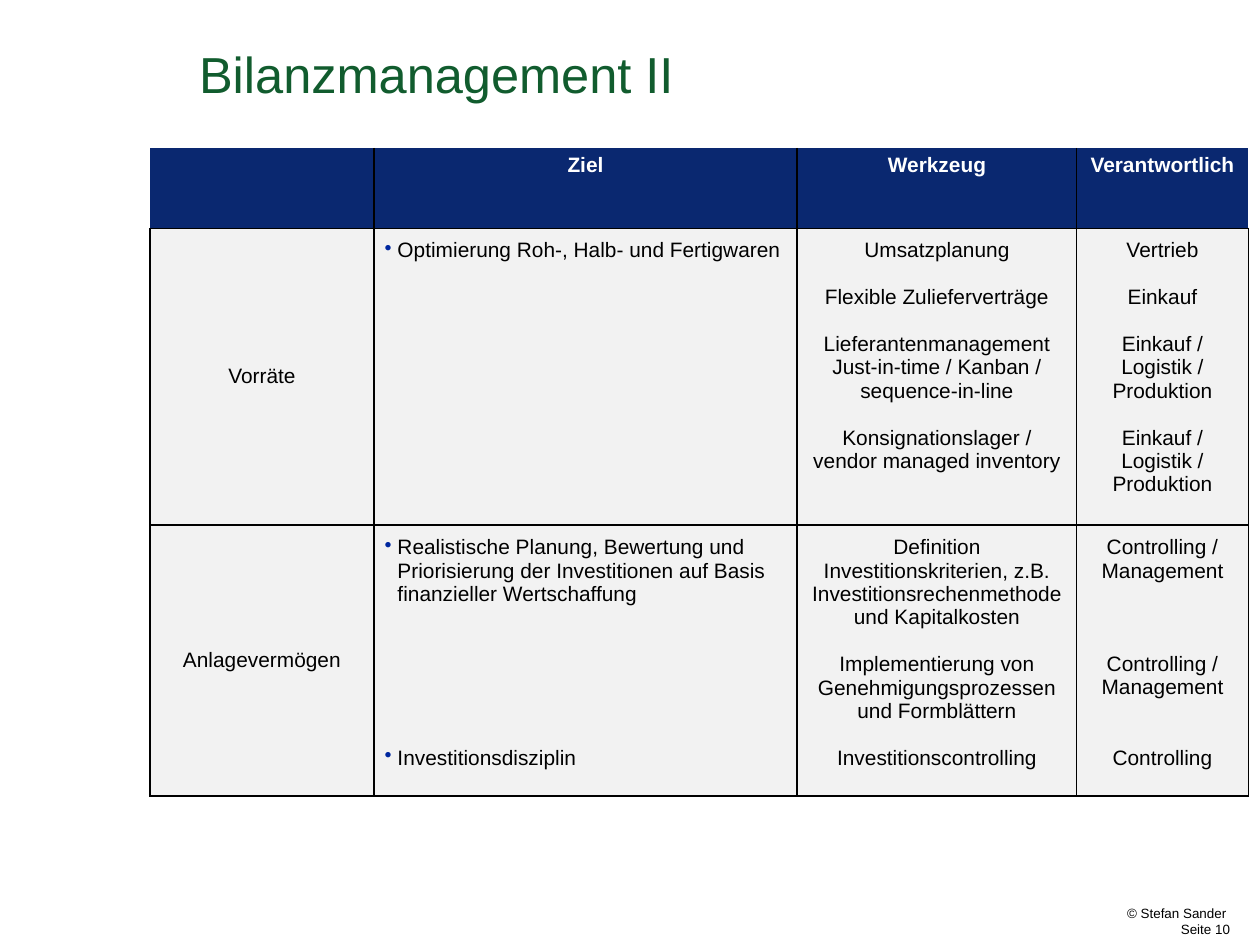
from dataclasses import dataclass

from lxml.etree import SubElement
from pptx import Presentation
from pptx.dml.color import RGBColor
from pptx.enum.text import MSO_ANCHOR, PP_ALIGN
from pptx.oxml.ns import qn
from pptx.util import Inches, Pt

COLORS = {
    "title": "115C2E",
    "header": "0A2870",
    "body": "F2F2F2",
    "white": "FFFFFF",
    "black": "000000",
    "bullet": "00279F",
}
FONT = "Arial"
TABLE_SIZE = 14
LINE_POINTS = 15.7
COLUMN_WIDTHS = (2.09, 3.95, 2.61, 1.6)
ROW_HEIGHTS = (0.75, 2.77, 2.53)


@dataclass(frozen=True)
class Line:
    text: str
    gap_lines: int = 0


@dataclass(frozen=True)
class AssetRow:
    name: str
    goals: tuple[Line, ...]
    tools: tuple[Line, ...]
    owners: tuple[Line, ...]


HEADERS = ("", "Ziel", "Werkzeug", "Verantwortlich")
ASSET_ROWS = (
    AssetRow(
        "Vorräte",
        (Line("Optimierung Roh-, Halb- und Fertigwaren"),),
        (
            Line("Umsatzplanung"),
            Line("Flexible Zulieferverträge", 1),
            Line("Lieferantenmanagement", 1),
            Line("Just-in-time / Kanban /"),
            Line("sequence-in-line"),
            Line("Konsignationslager /", 1),
            Line("vendor managed inventory"),
        ),
        (
            Line("Vertrieb"),
            Line("Einkauf", 1),
            Line("Einkauf /", 1),
            Line("Logistik /"),
            Line("Produktion"),
            Line("Einkauf /", 1),
            Line("Logistik /"),
            Line("Produktion"),
        ),
    ),
    AssetRow(
        "Anlagevermögen",
        (
            Line(
                "Realistische Planung, Bewertung und Priorisierung der "
                "Investitionen auf Basis finanzieller Wertschaffung"
            ),
            Line("Investitionsdisziplin", 6),
        ),
        (
            Line(
                "Definition Investitionskriterien, z.B. "
                "Investitionsrechenmethode und Kapitalkosten"
            ),
            Line("Implementierung von Genehmigungsprozessen und Formblättern", 1),
            Line("Investitionscontrolling", 1),
        ),
        (
            Line("Controlling /"),
            Line("Management"),
            Line("Controlling /", 3),
            Line("Management"),
            Line("Controlling", 2),
        ),
    ),
)


def add_run(paragraph, text: str, size: float, color: str, bold: bool = False) -> None:
    run = paragraph.add_run()
    run.text = text
    run.font.name = FONT
    run.font.size = Pt(size)
    run.font.bold = bold
    run.font.color.rgb = RGBColor.from_string(COLORS[color])


def add_text_box(slide, left: float, top: float, width: float, height: float):
    text_frame = slide.shapes.add_textbox(
        Inches(left), Inches(top), Inches(width), Inches(height)
    ).text_frame
    text_frame.word_wrap = True
    return text_frame


def set_border(cell, side: str, visible: bool) -> None:
    line = SubElement(cell._tc.get_or_add_tcPr(), qn(f"a:ln{side}"), w=str(Pt(1)))
    if visible:
        fill = SubElement(line, qn("a:solidFill"))
        SubElement(fill, qn("a:srgbClr"), val=COLORS["black"])
    else:
        SubElement(line, qn("a:noFill"))


def style_cell(cell, fill: str, hidden_sides: str = "") -> None:
    for side in "LRTB":
        set_border(cell, side, side not in hidden_sides)
    cell.fill.solid()
    cell.fill.fore_color.rgb = RGBColor.from_string(COLORS[fill])


def add_bullet(paragraph) -> None:
    properties = paragraph._p.get_or_add_pPr()
    properties.set("marL", str(Inches(0.12)))
    properties.set("indent", str(Inches(-0.12)))
    color = SubElement(properties, qn("a:buClr"))
    SubElement(color, qn("a:srgbClr"), val=COLORS["bullet"])
    SubElement(properties, qn("a:buChar"), char="•")


def write_lines(cell, lines: tuple[Line, ...], bulleted: bool = False) -> None:
    cell.margin_left = cell.margin_right = Inches(0.1)
    cell.margin_top = cell.margin_bottom = Inches(0.1)
    for index, line in enumerate(lines):
        text_frame = cell.text_frame
        paragraph = text_frame.add_paragraph() if index else text_frame.paragraphs[0]
        if line.gap_lines:
            paragraph.space_before = Pt(line.gap_lines * LINE_POINTS)
        if bulleted:
            add_bullet(paragraph)
        else:
            paragraph.alignment = PP_ALIGN.CENTER
        add_run(paragraph, line.text, TABLE_SIZE, "black")


def add_asset_table(slide) -> None:
    table = slide.shapes.add_table(
        len(ROW_HEIGHTS), len(COLUMN_WIDTHS), Inches(1.4), Inches(1.38),
        Inches(sum(COLUMN_WIDTHS)), Inches(sum(ROW_HEIGHTS)),
    ).table
    table.first_row = table.horz_banding = False
    for column, width in zip(table.columns, COLUMN_WIDTHS):
        column.width = Inches(width)
    for row, height in zip(table.rows, ROW_HEIGHTS):
        row.height = Inches(height)

    last_column = len(HEADERS) - 1
    for index, header in enumerate(HEADERS):
        cell = table.cell(0, index)
        style_cell(cell, "header", "T" + {0: "L", last_column: "R"}.get(index, ""))
        if header:
            paragraph = cell.text_frame.paragraphs[0]
            paragraph.alignment = PP_ALIGN.CENTER
            add_run(paragraph, header, TABLE_SIZE, "white", bold=True)

    for row_index, asset in enumerate(ASSET_ROWS, start=1):
        columns = ((Line(asset.name),), asset.goals, asset.tools, asset.owners)
        for index, lines in enumerate(columns):
            cell = table.cell(row_index, index)
            style_cell(cell, "body")
            write_lines(cell, lines, bulleted=index == 1)
        table.cell(row_index, 0).vertical_anchor = MSO_ANCHOR.MIDDLE


def main() -> None:
    presentation = Presentation()
    presentation.slide_width = Inches(11.76)
    presentation.slide_height = Inches(8.82)
    slide = presentation.slides.add_slide(presentation.slide_layouts[6])

    footer = add_text_box(slide, 4.78, 8.45, 6.7, 0.3)
    footer.margin_left = footer.margin_right = 0
    footer.margin_top = footer.margin_bottom = 0
    for index, text in enumerate(("© Stefan Sander ", " Seite 10")):
        paragraph = footer.add_paragraph() if index else footer.paragraphs[0]
        paragraph.alignment = PP_ALIGN.RIGHT
        add_run(paragraph, text, 9, "black")

    title = add_text_box(slide, 1.76, 0.44, 9.54, 1.06).paragraphs[0]
    title.line_spacing = 0.85
    add_run(title, "Bilanzmanagement II", 34, "title")

    add_asset_table(slide)
    presentation.save("out.pptx")


if __name__ == "__main__":
    main()
